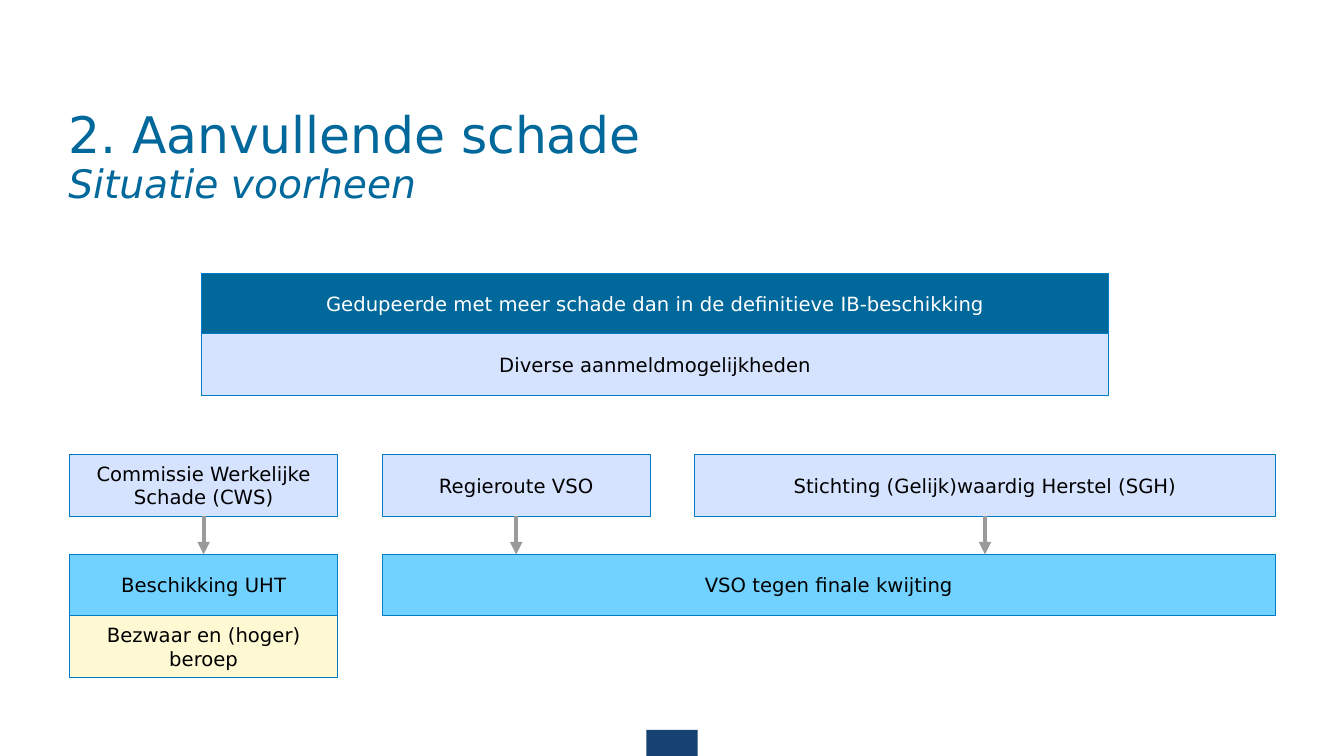
import pptx
import pptx.util
import pptx.dml.color
import pptx.enum.shapes
import pptx.enum.text
import pptx.oxml.ns
import lxml.etree

WIDE, HIGH = 13.33, 7.5
FONT = "DejaVu Sans"
LEFT, COL, STEP = 0.69, 2.66, 3.1
ROW = 0.61
TOPS = {"head": 2.71, "entry": 3.31, "route": 4.51, "result": 5.5, "appeal": 6.11}
BLUE, PALE, SKY, CREAM = "00689A", "D6E3FF", "71D1FF", "FEF9D2"
EDGE, GREY, NAVY = "017BC6", "9A9A9A", "154273"

inch = pptx.util.Inches


def color(code):
    return pptx.dml.color.RGBColor.from_string(code)


def span(col, count=1):
    """Left edge and width of a run of grid columns."""
    return LEFT + col * STEP, COL + (count - 1) * STEP


def rect(shapes, left, top, width, height, fill):
    kind = pptx.enum.shapes.MSO_SHAPE.RECTANGLE
    shape = shapes.add_shape(kind, inch(left), inch(top), inch(width), inch(height))
    shape.shadow.inherit = False
    shape.fill.solid()
    shape.fill.fore_color.rgb = color(fill)
    shape.line.fill.background()
    return shape


def box(shapes, place, row, text, fill, ink="000000"):
    left, width = place
    shape = rect(shapes, left, TOPS[row], width, ROW, fill)
    shape.line.color.rgb = color(EDGE)
    shape.line.width = pptx.util.Pt(0.75)
    frame = shape.text_frame
    frame.word_wrap = True
    frame.vertical_anchor = pptx.enum.text.MSO_ANCHOR.MIDDLE
    para = frame.paragraphs[0]
    para.text = text
    para.alignment = pptx.enum.text.PP_ALIGN.CENTER
    para.font.name = FONT
    para.font.size = pptx.util.Pt(14)
    para.font.color.rgb = color(ink)
    return shape


def arrow(shapes, start, end):
    """Straight arrow down from the middle of start to the top of end."""
    mid = start.left + start.width // 2
    kind = pptx.enum.shapes.MSO_CONNECTOR.STRAIGHT
    line = shapes.add_connector(kind, mid, start.top + start.height, mid, end.top)
    line.begin_connect(start, 2)
    if abs(mid - end.left - end.width // 2) < inch(0.01):
        line.end_connect(end, 0)
    line.line.color.rgb = color(GREY)
    line.line.width = pptx.util.Pt(3)
    qn = pptx.oxml.ns.qn
    lxml.etree.SubElement(line.line._get_or_add_ln(), qn("a:tailEnd"), type="triangle")
    lxml.etree.SubElement(line._element.spPr, qn("a:effectLst"))


def title(shapes, main, sub):
    area = shapes.add_textbox(inch(0.58), inch(1.04), inch(11.84), inch(1.03))
    area.text_frame.word_wrap = True
    para = area.text_frame.paragraphs[0]
    para.line_spacing = 0.9
    para.font.name = FONT
    para.font.color.rgb = color(BLUE)
    for text, size, slant in ((main, 36, False), (sub, 28, True)):
        if slant:
            para.add_line_break()
        run = para.add_run()
        run.text = text
        run.font.name = FONT
        run.font.color.rgb = color(BLUE)
        run.font.size = pptx.util.Pt(size)
        run.font.italic = slant


def main():
    deck = pptx.Presentation()
    deck.slide_width, deck.slide_height = inch(WIDE), inch(HIGH)
    shapes = deck.slides.add_slide(deck.slide_layouts[6]).shapes

    rect(shapes, 6.41, 7.24, 0.51, 0.26, NAVY)
    title(shapes, "2. Aanvullende schade", "Situatie voorheen")

    intake = shapes.add_group_shape().shapes
    wide = (0.15 * WIDE, 0.675 * WIDE)
    box(intake, wide, "head",
        "Gedupeerde met meer schade dan in de definitieve IB-beschikking", BLUE, "FFFFFF")
    box(intake, wide, "entry", "Diverse aanmeldmogelijkheden", PALE)

    trust = box(shapes, span(2, 2), "route",
                "Stichting (Gelijk)waardig Herstel (SGH)", PALE)
    guide = box(shapes, span(1), "route", "Regieroute VSO", PALE)
    board = box(shapes, span(0), "route", "Commissie Werkelijke Schade (CWS)", PALE)
    deal = box(shapes, span(1, 3), "result", "VSO tegen finale kwijting", SKY)

    ruling = shapes.add_group_shape().shapes
    order = box(ruling, span(0), "result", "Beschikking UHT", SKY)
    box(ruling, span(0), "appeal", "Bezwaar en (hoger) beroep", CREAM)

    for start, end in ((trust, deal), (guide, deal), (board, order)):
        arrow(shapes, start, end)

    deck.save("out.pptx")


if __name__ == "__main__":
    main()
